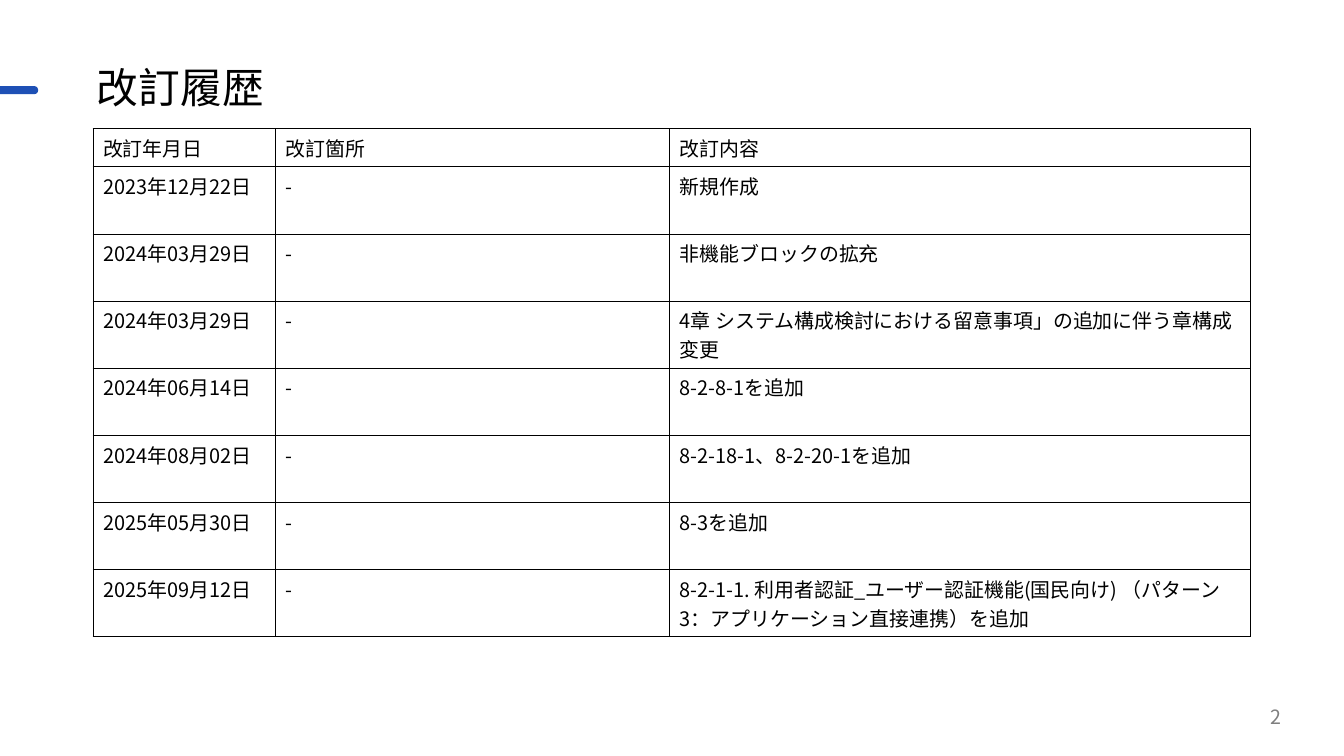
import lxml.etree
import pptx
import pptx.dml.color
import pptx.enum.shapes
import pptx.enum.text
import pptx.oxml.ns
import pptx.util

Inches = pptx.util.Inches
Pt = pptx.util.Pt
qn = pptx.oxml.ns.qn

REVISIONS = [
    ("改訂年月日", "改訂箇所", "改訂内容"),
    ("2023年12月22日", "-", "新規作成"),
    ("2024年03月29日", "-", "非機能ブロックの拡充"),
    ("2024年03月29日", "-", "4章 システム構成検討における留意事項」の追加に伴う章構成変更"),
    ("2024年06月14日", "-", "8-2-8-1を追加"),
    ("2024年08月02日", "-", "8-2-18-1、8-2-20-1を追加"),
    ("2025年05月30日", "-", "8-3を追加"),
    ("2025年09月12日", "-",
     "8-2-1-1. 利用者認証_ユーザー認証機能(国民向け) （パターン3：アプリケーション直接連携）を追加"),
]


def rgb(value):
    return pptx.dml.color.RGBColor.from_string(value)


class RevisionSlide:
    font = "Noto Sans CJK JP"
    ink = "000000"
    accent = "1E50B5"
    muted = "7F7F7F"
    body_size = 21

    def __init__(self, deck):
        self.slide = deck.slides.add_slide(deck.slide_layouts[5])

    def style(self, paragraph, size, color):
        paragraph.font.size = Pt(size)
        paragraph.font.color.rgb = rgb(color)
        paragraph.font.name = self.font
        east_asian = lxml.etree.SubElement(paragraph.font._element, qn("a:ea"))
        east_asian.set("typeface", self.font)

    def inset(self, holder, side, edge=0.07):
        holder.margin_left = holder.margin_right = Inches(side)
        holder.margin_top = holder.margin_bottom = Inches(edge)

    def heading(self, text, left, top, width, height):
        title = self.slide.shapes.title
        title.left, title.top = Inches(left), Inches(top)
        title.width, title.height = Inches(width), Inches(height)
        frame = title.text_frame
        frame.text = text
        frame.word_wrap = True
        frame.auto_size = pptx.enum.text.MSO_AUTO_SIZE.NONE
        frame.vertical_anchor = pptx.enum.text.MSO_ANCHOR.MIDDLE
        self.inset(frame, 0.07)
        paragraph = frame.paragraphs[0]
        paragraph.alignment = pptx.enum.text.PP_ALIGN.LEFT
        paragraph.line_spacing = 0.9
        self.style(paragraph, 44, self.ink)

    def accent_bar(self, left, top, width, height):
        bar = self.slide.shapes.add_shape(
            pptx.enum.shapes.MSO_SHAPE.ROUNDED_RECTANGLE,
            Inches(left), Inches(top), Inches(width), Inches(height))
        bar.adjustments[0] = 0.5
        bar.shadow.inherit = False
        bar.fill.solid()
        bar.fill.fore_color.rgb = rgb(self.accent)
        bar.line.fill.background()

    def cell_borders(self, cell):
        properties = cell._tc.get_or_add_tcPr()
        for side in ("lnL", "lnR", "lnT", "lnB"):
            line = lxml.etree.SubElement(properties, qn(f"a:{side}"), w=str(Pt(0.75)))
            fill = lxml.etree.SubElement(line, qn("a:solidFill"))
            lxml.etree.SubElement(fill, qn("a:srgbClr"), val=self.ink)

    def history(self, rows, left, top, widths, row_height):
        table = self.slide.shapes.add_table(
            len(rows), len(widths), Inches(left), Inches(top),
            Inches(sum(widths)), Inches(row_height * len(rows))).table
        table.first_row = table.horz_banding = False
        for column, width in zip(table.columns, widths):
            column.width = Inches(width)
        for row, texts in zip(table.rows, rows):
            row.height = Inches(row_height)
            for cell, text in zip(row.cells, texts):
                cell.text = text
                self.inset(cell, 0.15)
                self.cell_borders(cell)
                cell.fill.background()
                self.style(cell.text_frame.paragraphs[0], self.body_size, self.ink)

    def page_number(self, text, left, top, width, height):
        frame = self.slide.shapes.add_textbox(
            Inches(left), Inches(top), Inches(width), Inches(height)).text_frame
        frame.text = text
        frame.word_wrap = True
        frame.vertical_anchor = pptx.enum.text.MSO_ANCHOR.MIDDLE
        self.inset(frame, 0.15)
        paragraph = frame.paragraphs[0]
        paragraph.alignment = pptx.enum.text.PP_ALIGN.RIGHT
        self.style(paragraph, 20.7, self.muted)


def main():
    deck = pptx.Presentation()
    deck.slide_width, deck.slide_height = Inches(19.69), Inches(11.07)
    page = RevisionSlide(deck)
    page.accent_bar(-0.14, 1.26, 0.7, 0.12)
    page.heading("改訂履歴", 1.35, 0.75, 16.98, 1.13)
    page.history(REVISIONS, 1.36, 1.88, (2.68, 5.77, 8.51), 0.5)
    page.page_number("2", 14.49, 10.25, 4.43, 0.5)
    deck.save("out.pptx")


if __name__ == "__main__":
    main()
